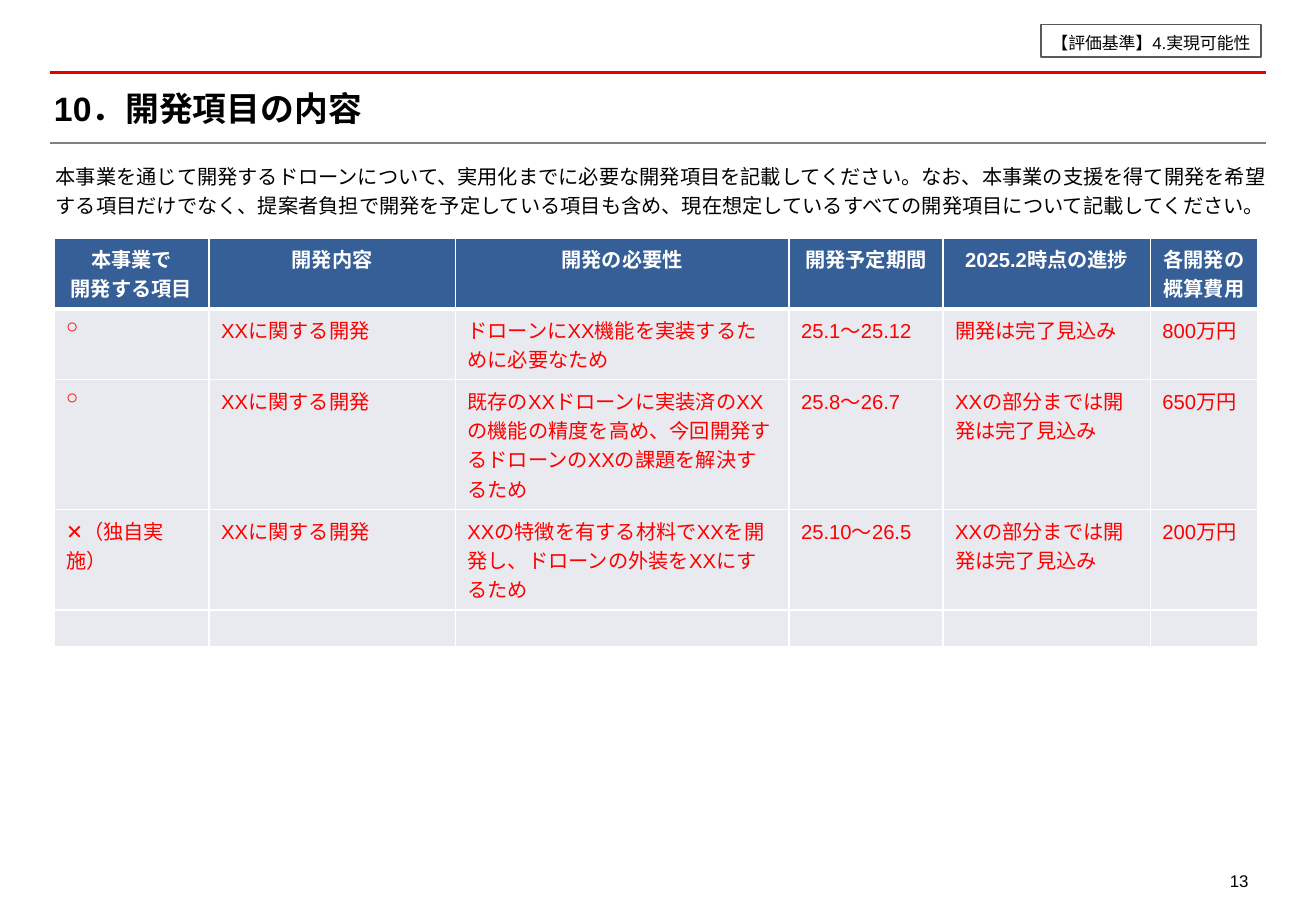
from dataclasses import dataclass

from lxml import etree
from pptx import Presentation
from pptx.dml.color import RGBColor
from pptx.enum.shapes import MSO_CONNECTOR, MSO_SHAPE
from pptx.enum.text import MSO_ANCHOR, MSO_AUTO_SIZE, PP_ALIGN
from pptx.oxml.ns import qn
from pptx.util import Pt

LEFT, CENTER, RIGHT = PP_ALIGN.LEFT, PP_ALIGN.CENTER, PP_ALIGN.RIGHT
TOP, MIDDLE = MSO_ANCHOR.TOP, MSO_ANCHOR.MIDDLE
STRAIGHT = MSO_CONNECTOR.STRAIGHT
RECTANGLE = MSO_SHAPE.RECTANGLE
NO_AUTOSIZE = MSO_AUTO_SIZE.NONE
TITLE_ONLY_LAYOUT = 5


@dataclass(frozen=True)
class Theme:
    font: str = "Arial"
    ink: str = "000000"
    white: str = "FFFFFF"
    accent: str = "E60000"
    rule: str = "808080"
    badge_line: str = "595959"
    header_fill: str = "365F97"
    body_fill: str = "E8EAEF"
    sample: str = "FF0000"
    title_size: float = 20
    body_size: float = 12
    small_size: float = 10
    loose: float = 1.2
    single: float = 1.0


THEME = Theme()

COLUMN_WIDTHS = (91.9, 146, 197.8, 91.3, 122.9, 63.4)
ROW_HEIGHTS = (41.5, 42, 77, 59.5, 22)
ITEMS = (
    ("本事業で\n開発する項目", "開発内容", "開発の必要性", "開発予定期間",
     "2025.2時点の進捗", "各開発の概算費用"),
    ("○", "XXに関する開発", "ドローンにXX機能を実装するために必要なため",
     "25.1～25.12", "開発は完了見込み", "800万円"),
    ("○", "XXに関する開発",
     "既存のXXドローンに実装済のXXの機能の精度を高め、今回開発するドローンのXXの課題を解決するため",
     "25.8～26.7", "XXの部分までは開発は完了見込み", "650万円"),
    ("✕（独自実施）", "XXに関する開発",
     "XXの特徴を有する材料でXXを開発し、ドローンの外装をXXにするため",
     "25.10～26.5", "XXの部分までは開発は完了見込み", "200万円"),
    ("",) * 6,
)
GUIDANCE = (
    "本事業を通じて開発するドローンについて、実用化までに必要な開発項目を記載してください。"
    "なお、本事業の支援を得て開発を希望する項目だけでなく、提案者負担で開発を予定している項目も含め、"
    "現在想定しているすべての開発項目について記載してください。"
)


def color(value):
    return RGBColor.from_string(value)


def write(frame, text, size, ink=THEME.ink, bold=False, align=LEFT, spacing=THEME.single):
    for index, line in enumerate(text.split("\n")):
        para = frame.add_paragraph() if index else frame.paragraphs[0]
        para.alignment = align
        para.line_spacing = spacing
        para.space_before = Pt(0)
        span = para.add_run()
        span.text = line
        span.font.name = THEME.font
        span.font.size = Pt(size)
        span.font.bold = bold
        span.font.color.rgb = color(ink)


def setup_frame(frame, anchor=TOP, wrap=True):
    frame.auto_size = NO_AUTOSIZE
    frame.word_wrap = wrap
    frame.vertical_anchor = anchor
    frame.margin_left = frame.margin_right = Pt(0)
    frame.margin_top = frame.margin_bottom = Pt(0)


def add_text(page, box, text, size, align=LEFT):
    shape = page.shapes.add_textbox(*map(Pt, box))
    setup_frame(shape.text_frame)
    write(shape.text_frame, text, size, align=align, spacing=THEME.loose)


def add_rule(page, left, right, top, line_color, width):
    rule = page.shapes.add_connector(STRAIGHT, Pt(left), Pt(top), Pt(right), Pt(top))
    rule.line.color.rgb = color(line_color)
    rule.line.width = Pt(width)
    etree.SubElement(rule._element.spPr, qn("a:effectLst"))


def add_heading(page, box, text):
    left, top, width, height = box
    # Rules above and below the title
    add_rule(page, left, left + width, top, THEME.accent, 2)
    add_rule(page, left, left + width, top + height, THEME.rule, 1.25)
    # Title
    title = page.shapes.title
    title.left, title.top = Pt(left + 2.5), Pt(top + 5.85)
    title.width, title.height = Pt(width - 7), Pt(30)
    setup_frame(title.text_frame, MIDDLE)
    write(title.text_frame, text, THEME.title_size, bold=True)


def add_badge(page, box, text):
    badge = page.shapes.add_shape(RECTANGLE, *map(Pt, box))
    badge.shadow.inherit = False
    badge.fill.background()
    badge.line.color.rgb = color(THEME.badge_line)
    badge.line.width = Pt(1)
    setup_frame(badge.text_frame, MIDDLE, wrap=False)
    write(badge.text_frame, text, THEME.small_size, align=CENTER, spacing=THEME.loose)


def set_borders(cell, bottom_width):
    properties = cell._tc.get_or_add_tcPr()
    for side, width in (("L", 1), ("R", 1), ("T", 1), ("B", bottom_width)):
        line = etree.SubElement(properties, qn(f"a:ln{side}"), w=str(Pt(width)))
        fill = etree.SubElement(line, qn("a:solidFill"))
        etree.SubElement(fill, qn("a:srgbClr"), val=THEME.white)


def fill_cell(cell, text, is_header):
    set_borders(cell, 3 if is_header else 1)
    cell.fill.solid()
    cell.fill.fore_color.rgb = color(THEME.header_fill if is_header else THEME.body_fill)
    if text:
        write(cell.text_frame, text, THEME.body_size,
              THEME.white if is_header else THEME.sample,
              bold=is_header, align=CENTER if is_header else LEFT)
    else:
        # An empty cell keeps the body size so its row stays low
        etree.SubElement(cell.text_frame.paragraphs[0]._p, qn("a:endParaRPr"),
                         sz=str(int(THEME.body_size * 100)))


def add_item_table(page, left, top):
    frame = page.shapes.add_table(len(ITEMS), len(COLUMN_WIDTHS), Pt(left), Pt(top),
                                  Pt(sum(COLUMN_WIDTHS)), Pt(sum(ROW_HEIGHTS)))
    table = frame.table
    table.horz_banding = False
    for column, width in zip(table.columns, COLUMN_WIDTHS):
        column.width = Pt(width)
    for row, height, texts in zip(table.rows, ROW_HEIGHTS, ITEMS):
        row.height = Pt(height)
        for cell, text in zip(row.cells, texts):
            fill_cell(cell, text, texts is ITEMS[0])


def build_items_page(deck):
    page = deck.slides.add_slide(deck.slide_layouts[TITLE_ONLY_LAYOUT])
    add_heading(page, (29.5, 43, 721, 42), "10．開発項目の内容")
    add_badge(page, (617, 14.6, 130.3, 19.4), "【評価基準】4.実現可能性")
    add_item_table(page, 32, 141)
    add_text(page, (33, 94.3, 724, 37), GUIDANCE, THEME.body_size)
    # Page number
    add_text(page, (715, 513.5, 25, 18), "13", THEME.small_size, RIGHT)


def main():
    deck = Presentation()
    deck.slide_width, deck.slide_height = Pt(780), Pt(540)
    build_items_page(deck)
    deck.save("out.pptx")


if __name__ == "__main__":
    main()
